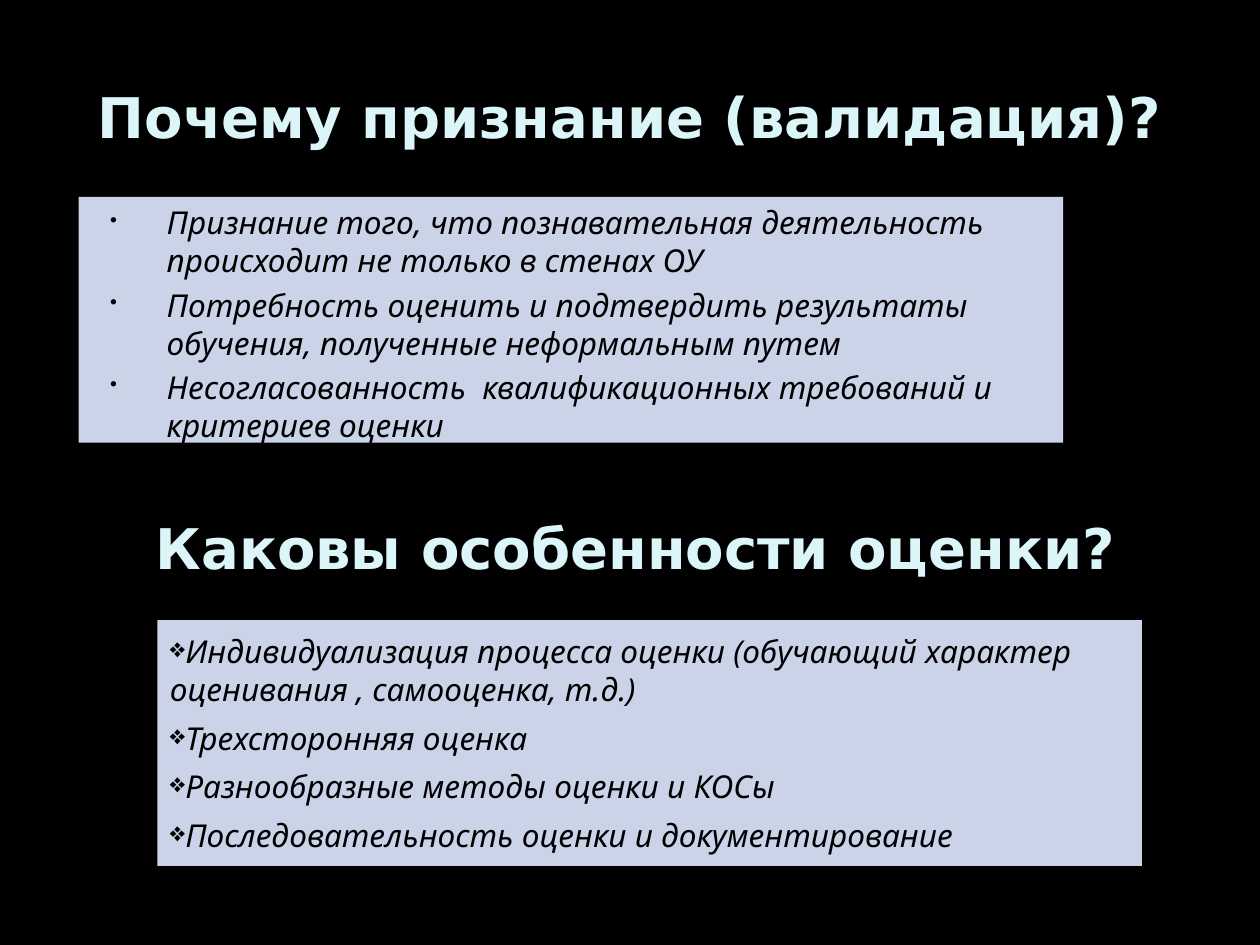
from dataclasses import dataclass

from lxml.etree import SubElement
from pptx import Presentation
from pptx.dml.color import RGBColor
from pptx.enum.shapes import MSO_SHAPE
from pptx.enum.text import MSO_ANCHOR, PP_ALIGN
from pptx.oxml.ns import qn
from pptx.util import Pt


@dataclass(frozen=True)
class Theme:
    background = RGBColor(0x00, 0x00, 0x00)
    heading = RGBColor(0xDB, 0xF5, 0xF9)
    panel = RGBColor(0xCA, 0xD3, 0xE8)
    body = RGBColor(0x00, 0x00, 0x00)
    heading_font = "DejaVu Sans"
    body_font = "Noto Sans"
    heading_size = Pt(32)
    body_size = Pt(18)
    body_line = Pt(21.7)


@dataclass(frozen=True)
class ListStyle:
    bullet: str
    bullet_percent: int
    anchor: MSO_ANCHOR
    margin: Pt = Pt(0)
    indent: Pt = Pt(0)
    space_before: Pt = Pt(0)
    space_after: Pt = Pt(0)


THEME = Theme()

REASONS_STYLE = ListStyle("•", 65, MSO_ANCHOR.TOP, margin=Pt(32.4 + 10.8),
                          indent=Pt(-32.4), space_before=Pt(3.6))
FEATURES_STYLE = ListStyle("❖", 85, MSO_ANCHOR.MIDDLE, space_after=Pt(6))

REASONS = (
    "Признание того, что познавательная деятельность происходит не только в стенах ОУ",
    "Потребность оценить и подтвердить результаты обучения, полученные неформальным путем",
    "Несогласованность  квалификационных требований и критериев оценки",
)
FEATURES = (
    "Индивидуализация процесса оценки (обучающий характер оценивания , самооценка, т.д.)",
    "Трехсторонняя оценка",
    "Разнообразные методы оценки и КОСы",
    "Последовательность оценки и документирование",
)


def format_font(font, name, size, color):
    font.name = name
    font.size = size
    font.color.rgb = color


def add_heading(slide, box, text):
    text_frame = slide.shapes.add_textbox(*box).text_frame
    text_frame.word_wrap = True
    text_frame.vertical_anchor = MSO_ANCHOR.MIDDLE
    text_frame.text = text
    paragraph = text_frame.paragraphs[0]
    paragraph.alignment = PP_ALIGN.CENTER
    font = paragraph.runs[0].font
    format_font(font, THEME.heading_font, THEME.heading_size, THEME.heading)
    font.bold = True


def set_bullet(paragraph, style):
    properties = paragraph._p.get_or_add_pPr()
    properties.set("marL", str(int(style.margin)))
    properties.set("indent", str(int(style.indent)))
    SubElement(properties, qn("a:buSzPct"), val=str(style.bullet_percent * 1000))
    SubElement(properties, qn("a:buChar"), char=style.bullet)


def add_list_panel(slide, box, items, style):
    panel = slide.shapes.add_shape(MSO_SHAPE.RECTANGLE, *box)
    panel.shadow.inherit = False
    panel.fill.solid()
    panel.fill.fore_color.rgb = THEME.panel
    panel.line.fill.background()

    text_frame = panel.text_frame
    text_frame.word_wrap = True
    text_frame.vertical_anchor = style.anchor
    text_frame.text = "\n".join(items)
    for paragraph in text_frame.paragraphs:
        paragraph.alignment = PP_ALIGN.LEFT
        paragraph.line_spacing = THEME.body_line
        paragraph.space_before = style.space_before
        paragraph.space_after = style.space_after
        set_bullet(paragraph, style)
        font = paragraph.runs[0].font
        format_font(font, THEME.body_font, THEME.body_size, THEME.body)
        font.italic = True


def main():
    presentation = Presentation()
    presentation.slide_width, presentation.slide_height = Pt(720), Pt(540)
    slide = presentation.slides.add_slide(presentation.slide_layouts[6])
    slide.background.fill.solid()
    slide.background.fill.fore_color.rgb = THEME.background

    panel_size = Pt(562.5), Pt(140.5)
    add_heading(slide, (Pt(36), Pt(21.6), Pt(648), Pt(90)),
                "Почему признание (валидация)?")
    add_list_panel(slide, (Pt(45), Pt(112.5), *panel_size), REASONS, REASONS_STYLE)
    add_heading(slide, (Pt(39.4), Pt(281.5), Pt(648), Pt(62)),
                "Каковы особенности оценки?")
    add_list_panel(slide, (Pt(90), Pt(354.3), *panel_size), FEATURES, FEATURES_STYLE)

    presentation.save("out.pptx")


if __name__ == "__main__":
    main()
